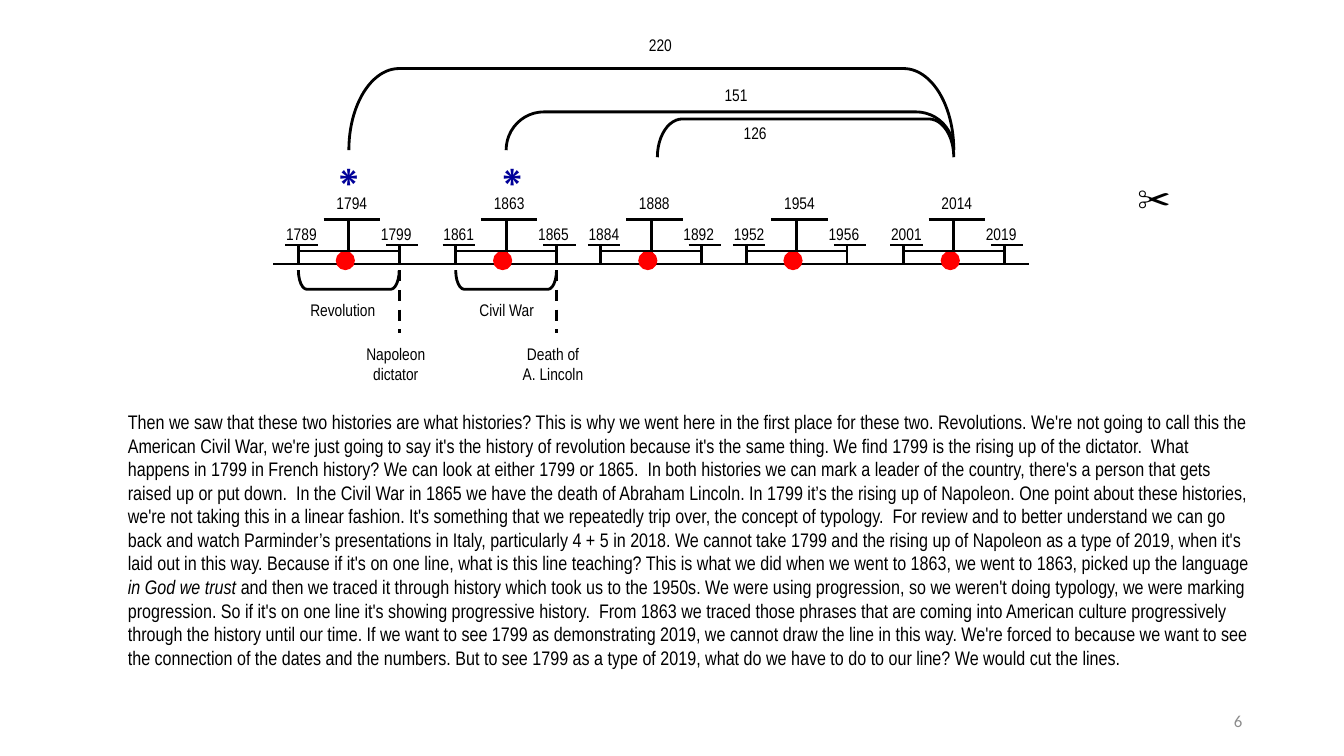
import pptx
import pptx.dml.color
import pptx.enum.dml
import pptx.enum.shapes
import pptx.enum.text
import pptx.oxml.ns
import pptx.util
from lxml import etree

PX = 9144  # 100 px to the inch
ALIGN = pptx.enum.text.PP_ALIGN
SHAPE = pptx.enum.shapes.MSO_SHAPE
colour = pptx.dml.color.RGBColor.from_string

deck = pptx.Presentation()
deck.slide_width, deck.slide_height = 1333 * PX, 750 * PX
page = deck.slides.add_slide(deck.slide_layouts[6])


def add_text(place, lines, size=12, font="Arial Narrow", ink="000000",
             align=ALIGN.CENTER, bold=False, inset=4):
    """Each line is a paragraph, given as a list of (text, italic) spans."""
    box = page.shapes.add_textbox(*(length * PX for length in place))
    frame = box.text_frame
    frame.word_wrap = True
    if inset is not None:
        frame.margin_left = frame.margin_right = inset * PX
        frame.margin_top = frame.margin_bottom = inset * PX
    for index, spans in enumerate(lines):
        para = frame.paragraphs[0] if index == 0 else frame.add_paragraph()
        para.alignment = align
        para.font.size = pptx.util.Pt(size)
        para.font.name = font
        para.font.bold = bold
        para.font.color.rgb = colour(ink)
        for text, italic in spans:
            span = para.add_run()
            span.text = text
            if italic:
                span.font.italic = True
    return frame


def add_line(x1, y1, x2, y2):
    line = page.shapes.add_connector(
        pptx.enum.shapes.MSO_CONNECTOR.STRAIGHT, x1 * PX, y1 * PX, x2 * PX, y2 * PX)
    line.line.color.rgb = colour("000000")
    line.line.width = pptx.util.Pt(2)
    etree.SubElement(line._element.spPr, pptx.oxml.ns.qn("a:effectLst"))
    return line


# Slide number
number = add_text((942, 695, 300, 40), [[("6", False)]], font="Calibri",
                  ink="8C8C8C", align=ALIGN.RIGHT, inset=None)
number.vertical_anchor = pptx.enum.text.MSO_ANCHOR.MIDDLE

# Commentary
before_phrase = [
    "Then we saw that these two histories are what histories? This is why we went here in",
    "the first place for these two. Revolutions. We're not going to call this the American",
    "Civil War, we're just going to say it's the history of revolution because it's the same",
    "thing. We find 1799 is the rising up of the dictator.  What happens in 1799 in French",
    "history? We can look at either 1799 or 1865.  In both histories we can mark a leader of",
    "the country, there's a person that gets raised up or put down.  In the Civil War in 1865",
    "we have the death of Abraham Lincoln. In 1799 it’s the rising up of Napoleon. One point",
    "about these histories, we're not taking this in a linear fashion. It's something that we",
    "repeatedly trip over, the concept of typology.  For review and to better understand we",
    "can go back and watch Parminder’s presentations in Italy, particularly 4 + 5 in 2018. We",
    "cannot take 1799 and the rising up of Napoleon as a type of 2019, when it's laid out in",
    "this way. Because if it's on one line, what is this line teaching? This is what we did",
    "when we went to 1863, we went to 1863, picked up the language ",
]
after_phrase = [
    "and then we traced it through history which took us to the 1950s. We were using",
    "progression, so we weren't doing typology, we were marking progression. So if it's on",
    "one line it's showing progressive history.  From 1863 we traced those phrases that are",
    "coming into American culture progressively through the history until our time. If we",
    "want to see 1799 as demonstrating 2019, we cannot draw the line in this way. We're",
    "forced to because we want to see the connection of the dates and the numbers. But to see",
    "1799 as a type of 2019, what do we have to do to our line? We would cut the lines.",
]
commentary = [(" ".join(before_phrase), False), ("in God we trust ", True),
              (" ".join(after_phrase), False)]
body = add_text((117, 402, 1134, 269), [commentary], size=14, align=ALIGN.LEFT, inset=None)
body.auto_size = pptx.enum.text.MSO_AUTO_SIZE.SHAPE_TO_FIT_TEXT

# Timeline: each period has a start, a middle and an end year
add_line(271, 262, 1021, 262)
periods = [
    (346, "1789", "1794", "1799"),
    (502, "1861", "1863", "1865"),
    (646, "1884", "1888", "1892"),
    (790, "1952", "1954", "1956"),
    (946, "2001", "2014", "2019"),
]
for middle, start_year, middle_year, end_year in periods:
    add_line(middle, 218, middle, 262)
    add_line(middle - 25, 218, middle + 31, 218)
    for end in (middle - 50, middle + 50):
        add_line(end, 243, end, 262)
        add_line(end - 13, 243, end + 19, 243)
    add_text((middle - 25, 187, 56, 31), [[(middle_year, False)]])
    add_text((middle - 75, 218, 56, 25), [[(start_year, False)]])
    add_text((middle + 19, 218, 56, 25), [[(end_year, False)]])
    dot = page.shapes.add_shape(SHAPE.OVAL, (middle - 13) * PX, 249 * PX, 19 * PX, 19 * PX)
    dot.shadow.inherit = False
    dot.fill.solid()
    dot.fill.fore_color.rgb = colour("FF0000")
    dot.line.fill.background()
    add_line(middle - 50, 249, middle + 50, 249)

# Brackets: left, right, top, depth, rotation, curve
brackets = [
    (296, 396, 268, 19, 270, 0.444),
    (452, 552, 268, 19, 270, 0.444),
    (502, 946, 111, 38, 90, 0.986),
    (346, 946, 68, 81, 90, 0.615),
    (652, 946, 118, 38, 90, 0.653),
]
for left, right, top, depth, rotation, curve in brackets:
    span_length = right - left
    bracket = page.shapes.add_shape(
        SHAPE.LEFT_BRACKET, (left + right - depth) * PX // 2,
        (2 * top + depth - span_length) * PX // 2, depth * PX, span_length * PX)
    bracket.rotation = rotation
    bracket.adjustments[0] = curve
    bracket.shadow.inherit = False
    bracket.fill.background()
    bracket.line.color.rgb = colour("000000")
    bracket.line.width = pptx.util.Pt(2)

# Dashed drops from the end years
for x in (396, 552):
    drop = add_line(x, 268, x, 330)
    drop.line.dash_style = pptx.enum.dml.MSO_LINE.DASH

# Labels of brackets and drops
labels = [
    ((702, 80, 56, 31), ["151"]),
    ((627, 30, 56, 31), ["220"]),
    ((721, 118, 56, 31), ["126"]),
    ((296, 293, 88, 31), ["Revolution"]),
    ((465, 293, 75, 31), ["Civil War"]),
    ((352, 337, 81, 50), ["Napoleon", "dictator"]),
    ((508, 337, 81, 50), ["Death of", "A. Lincoln"]),
]
for place, words in labels:
    add_text(place, [[(word, False)] for word in words])

# Symbols
for left in (321, 483):
    add_text((left, 149, 50, 38), [[("⁕", False)]], size=26,
             font="Times New Roman", ink="000099", bold=True)
add_text((1124, 172, 69, 56), [[("✂", False)]], size=24, font="Arial", align=ALIGN.LEFT)

deck.save("out.pptx")
